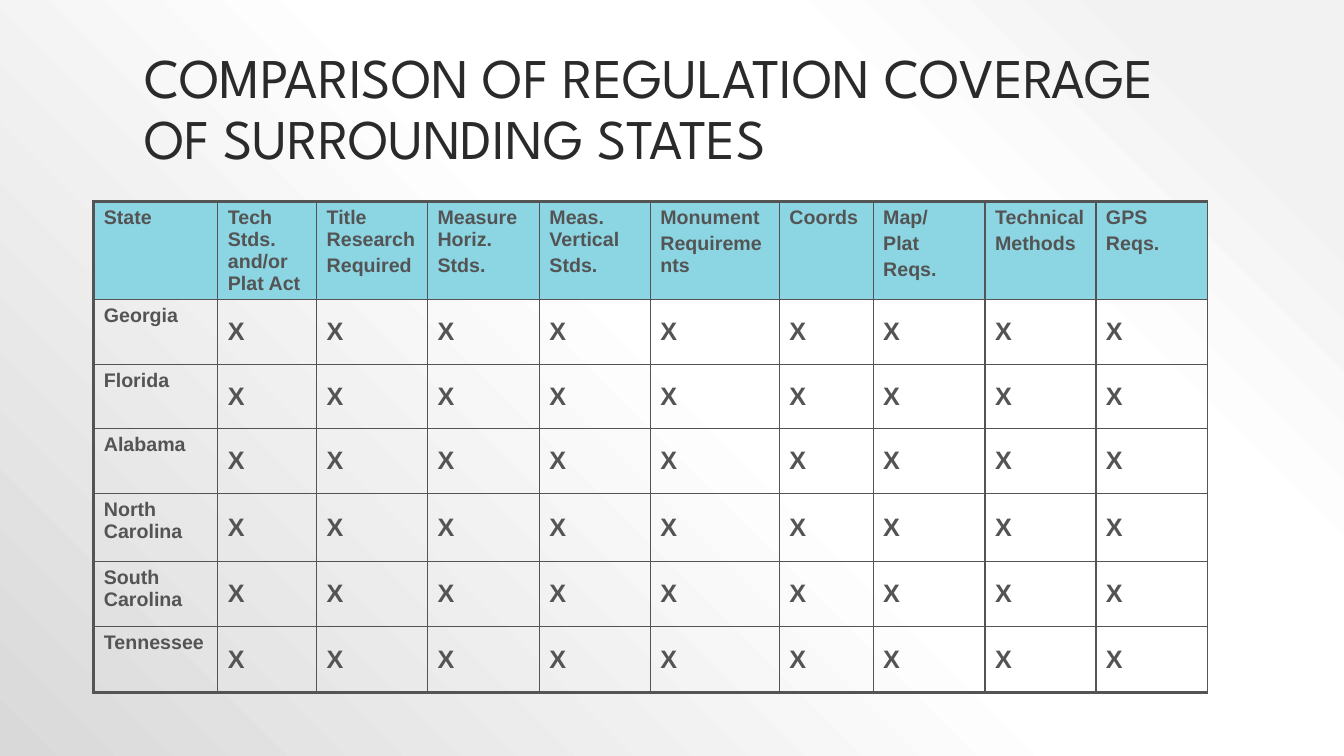
from lxml import etree
from pptx import Presentation
from pptx.dml.color import RGBColor
from pptx.enum.text import MSO_ANCHOR, MSO_AUTO_SIZE, PP_ALIGN
from pptx.oxml import parse_xml
from pptx.oxml.ns import qn
from pptx.util import Inches, Pt

TOP, MIDDLE, BOTTOM = MSO_ANCHOR.TOP, MSO_ANCHOR.MIDDLE, MSO_ANCHOR.BOTTOM
LEFT = PP_ALIGN.LEFT
NO_AUTOFIT = MSO_AUTO_SIZE.NONE

TITLE = "COMPARISON OF REGULATION COVERAGE OF SURROUNDING STATES"
HEADERS = [
    "State", "Tech Stds. and/or Plat Act", "Title Research\nRequired",
    "Measure Horiz.\nStds.", "Meas. Vertical\nStds.", "Monument\nRequirements",
    "Coords", "Map/\nPlat\nReqs.", "Technical\nMethods", "GPS\nReqs.",
]
STATES = ["Georgia", "Florida", "Alabama", "North Carolina", "South Carolina", "Tennessee"]
ROWS = [HEADERS] + [[state] + ["X"] * (len(HEADERS) - 1) for state in STATES]

COLUMN_WIDTHS = [1.23, 0.98, 1.1, 1.11, 1.1, 1.28, 0.93, 1.11, 1.1, 1.11]
ROW_HEIGHTS = [0.9, 0.64, 0.64, 0.64, 0.68, 0.64, 0.66]
THIN, THICK = 1, 2.25

COLORS = {"title": "2A2A2A", "table": "545454", "header": "8CD6E4"}
BACKGROUND_STOPS = [(10, "F2F2F2"), (28, "FFFFFF"), (48, "FFFFFF"), (100, "D9D9D9")]
DRAWING = "http://schemas.openxmlformats.org/drawingml/2006/main"


def set_background(slide):
    """Fill the slide with a circular gradient centred on the top right corner."""
    slide.background.fill.solid()
    properties = slide.element.find(".//" + qn("p:bgPr"))
    stops = "".join(
        f'<a:gs pos="{position * 1000}"><a:srgbClr val="{color}"/></a:gs>'
        for position, color in BACKGROUND_STOPS
    )
    gradient = parse_xml(
        f'<a:gradFill xmlns:a="{DRAWING}" rotWithShape="1"><a:gsLst>{stops}</a:gsLst>'
        '<a:path path="circle"><a:fillToRect l="100000" b="100000"/></a:path></a:gradFill>'
    )
    properties.replace(properties.find(qn("a:solidFill")), gradient)


def write_text(frame, text, *, size, font, color, bold=False, line_spacing=None, percent_before=None):
    frame.word_wrap = True
    for index, line in enumerate(text.split("\n")):
        paragraph = frame.paragraphs[0] if index == 0 else frame.add_paragraph()
        paragraph.alignment = LEFT
        if line_spacing:
            paragraph.line_spacing = line_spacing
        if percent_before is not None:
            before = etree.Element(qn("a:spcBef"))
            etree.SubElement(before, qn("a:spcPct"), val=str(percent_before * 1000))
            paragraph._p.get_or_add_pPr().insert(0, before)
        run = paragraph.add_run()
        run.text = line
        run.font.size = Pt(size)
        run.font.name = font
        run.font.bold = bold
        run.font.color.rgb = RGBColor.from_string(color)


def set_borders(cell, **widths):
    """Draw the cell borders; keys are L, R, T and B, in that order."""
    properties = cell._tc.get_or_add_tcPr()
    for index, (side, width) in enumerate(widths.items()):
        line = parse_xml(
            f'<a:ln{side} xmlns:a="{DRAWING}" w="{int(Pt(width))}"><a:solidFill>'
            f'<a:srgbClr val="{COLORS["table"]}"/></a:solidFill></a:ln{side}>'
        )
        properties.insert(index, line)


def add_title(slide):
    title = slide.shapes.title
    title.left, title.top = Inches(1.33), Inches(0.3)
    title.width, title.height = Inches(10.67), Inches(1.45)
    frame = title.text_frame
    frame.auto_size = NO_AUTOFIT
    frame.vertical_anchor = BOTTOM
    write_text(frame, TITLE, size=40, font="League Spartan", color=COLORS["title"], line_spacing=0.9)


def add_coverage_table(slide):
    table = slide.shapes.add_table(
        len(ROWS), len(HEADERS), Inches(0.93), Inches(2),
        Inches(sum(COLUMN_WIDTHS)), Inches(sum(ROW_HEIGHTS)),
    ).table
    table.first_row = table.horz_banding = False
    for column, width in zip(table.columns, COLUMN_WIDTHS):
        column.width = Inches(width)
    for row, height in zip(table.rows, ROW_HEIGHTS):
        row.height = Inches(height)

    last_row = len(ROWS) - 1
    for row_index, texts in enumerate(ROWS):
        for column_index, text in enumerate(texts):
            cell = table.cell(row_index, column_index)
            is_header = row_index == 0
            is_mark = not is_header and column_index > 0
            if is_header:
                cell.fill.solid()
                cell.fill.fore_color.rgb = RGBColor.from_string(COLORS["header"])
            else:
                cell.fill.background()
            cell.vertical_anchor = MIDDLE if is_mark else TOP
            write_text(
                cell.text_frame, text, size=18 if is_mark else 14, font="Arial",
                color=COLORS["table"], bold=True, percent_before=20,
            )
            set_borders(
                cell,
                L=THICK if column_index == 0 else THIN,
                R=THIN,
                T=THICK if is_header else THIN,
                B=THICK if row_index == last_row else THIN,
            )


def main():
    presentation = Presentation()
    presentation.slide_width, presentation.slide_height = Inches(13.33), Inches(7.5)
    slide = presentation.slides.add_slide(presentation.slide_layouts[5])
    set_background(slide)
    add_title(slide)
    add_coverage_table(slide)
    presentation.save("out.pptx")


if __name__ == "__main__":
    main()
